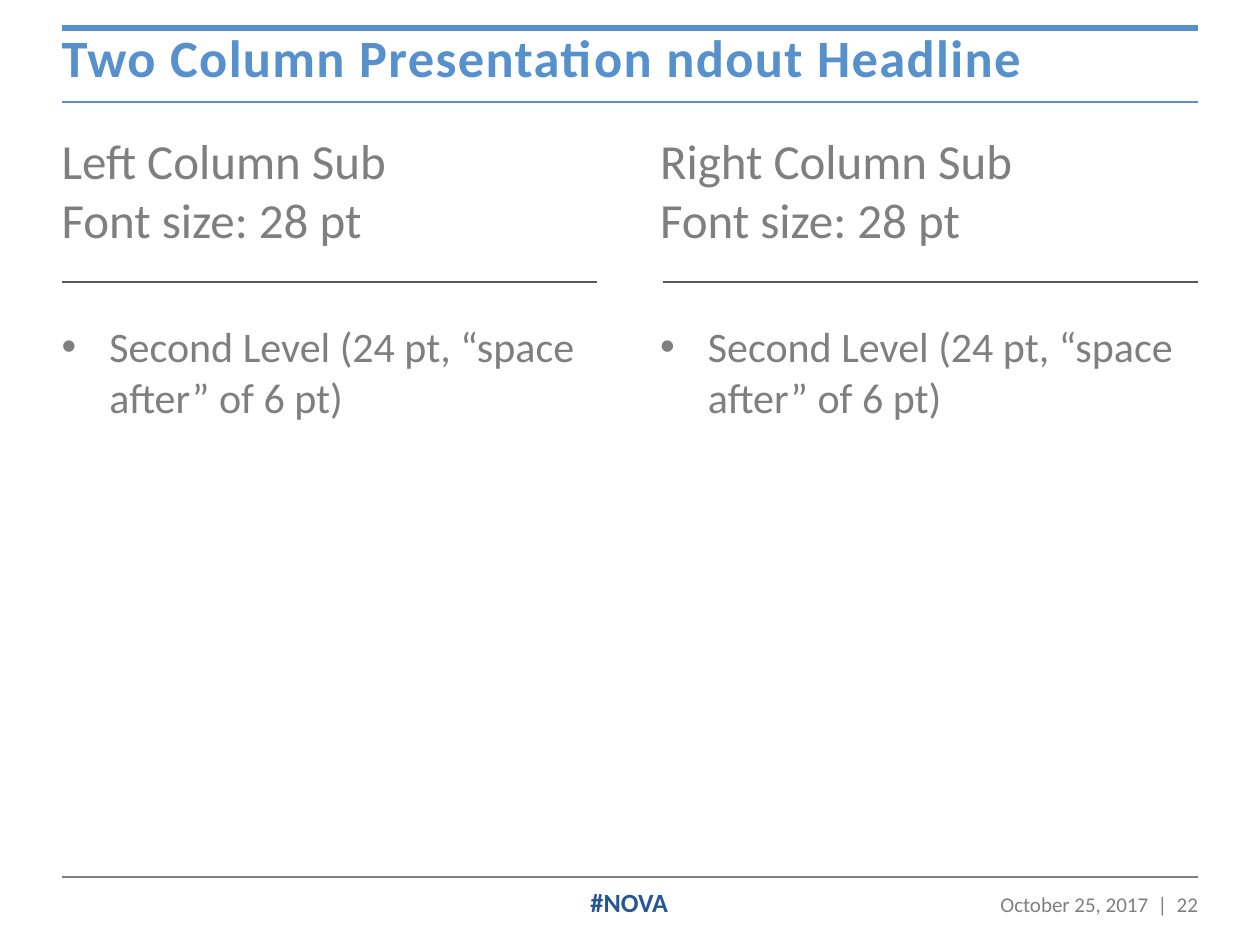
from pptx import Presentation
from pptx.dml.color import RGBColor
from pptx.enum.shapes import MSO_CONNECTOR
from pptx.enum.text import MSO_ANCHOR, PP_ALIGN
from pptx.oxml.ns import qn
from pptx.util import Inches, Pt
from lxml.etree import SubElement

COLORS = {"blue": "5691CE", "navy": "255694", "text": "7F7F7F",
          "dark": "595959", "gray": "808080"}

deck = Presentation()
deck.slide_width, deck.slide_height = Inches(10), Inches(7.5)
slide = deck.slides.add_slide(deck.slide_layouts[6])


def add_box(left, top, width, height):
    box = slide.shapes.add_textbox(Inches(left), Inches(top), Inches(width), Inches(height))
    box.text_frame.word_wrap = True
    return box.text_frame


def add_run(para, text, size, color, bold=False):
    run = para.add_run()
    run.text = text
    run.font.name = "Calibri"
    run.font.size = Pt(size)
    run.font.bold = bold
    run.font.color.rgb = RGBColor.from_string(COLORS[color])
    return run


tag = add_box(3.83, 6.96, 2.33, 0.4)
tag.vertical_anchor = MSO_ANCHOR.MIDDLE
para = tag.paragraphs[0]
para.alignment = PP_ALIGN.CENTER
add_run(para, "#NOVA", 15, "navy", True)

for side, left, width in [("Left", 0.39, 4.35), ("Right", 5.14, 4.49)]:
    frame = add_box(left, 0.99, width, 5.84)
    head = frame.paragraphs[0]
    head.space_after = Pt(6)
    add_run(head, f"{side} Column Sub", 28, "text")
    head.add_line_break()
    add_run(head, "Font size: 28 pt", 28, "text")

    item = frame.add_paragraph()
    item.space_before, item.space_after = Pt(35.3), Pt(6)
    props = item._p.get_or_add_pPr()
    props.set("marL", str(Inches(0.38)))
    props.set("indent", str(-Inches(0.38)))
    SubElement(props, qn("a:buFont"), typeface="Arial")
    SubElement(props, qn("a:buChar"), char="•")
    add_run(item, "Second Level (24 pt, “space after” of 6 pt)", 24, "text")

for start, end, top, color, weight in [
    (0.49, 9.51, 0.81, "blue", 1),
    (0.49, 9.51, 0.22, "blue", 3.5),
    (4.74, 0.49, 2.24, "dark", 1),
    (9.51, 5.26, 2.24, "dark", 1),
    (0.49, 9.51, 6.96, "gray", 1),
]:
    rule = slide.shapes.add_connector(
        MSO_CONNECTOR.STRAIGHT, Inches(start), Inches(top), Inches(end), Inches(top))
    rule.line.color.rgb = RGBColor.from_string(COLORS[color])
    rule.line.width = Pt(weight)
    SubElement(rule._element.spPr, qn("a:effectLst"))

para = add_box(0.39, 0.21, 9.12, 0.53).paragraphs[0]
para.line_spacing = 0.9
title = add_run(para, "Two Column Presentation ndout Headline", 30, "blue", True)
title._r.get_or_add_rPr().set("spc", "80")

para = add_box(7.71, 7.03, 1.9, 0.38).paragraphs[0]
para.alignment = PP_ALIGN.RIGHT
add_run(para, "October 25, 2017  |  22", 12, "text")

deck.save("out.pptx")
